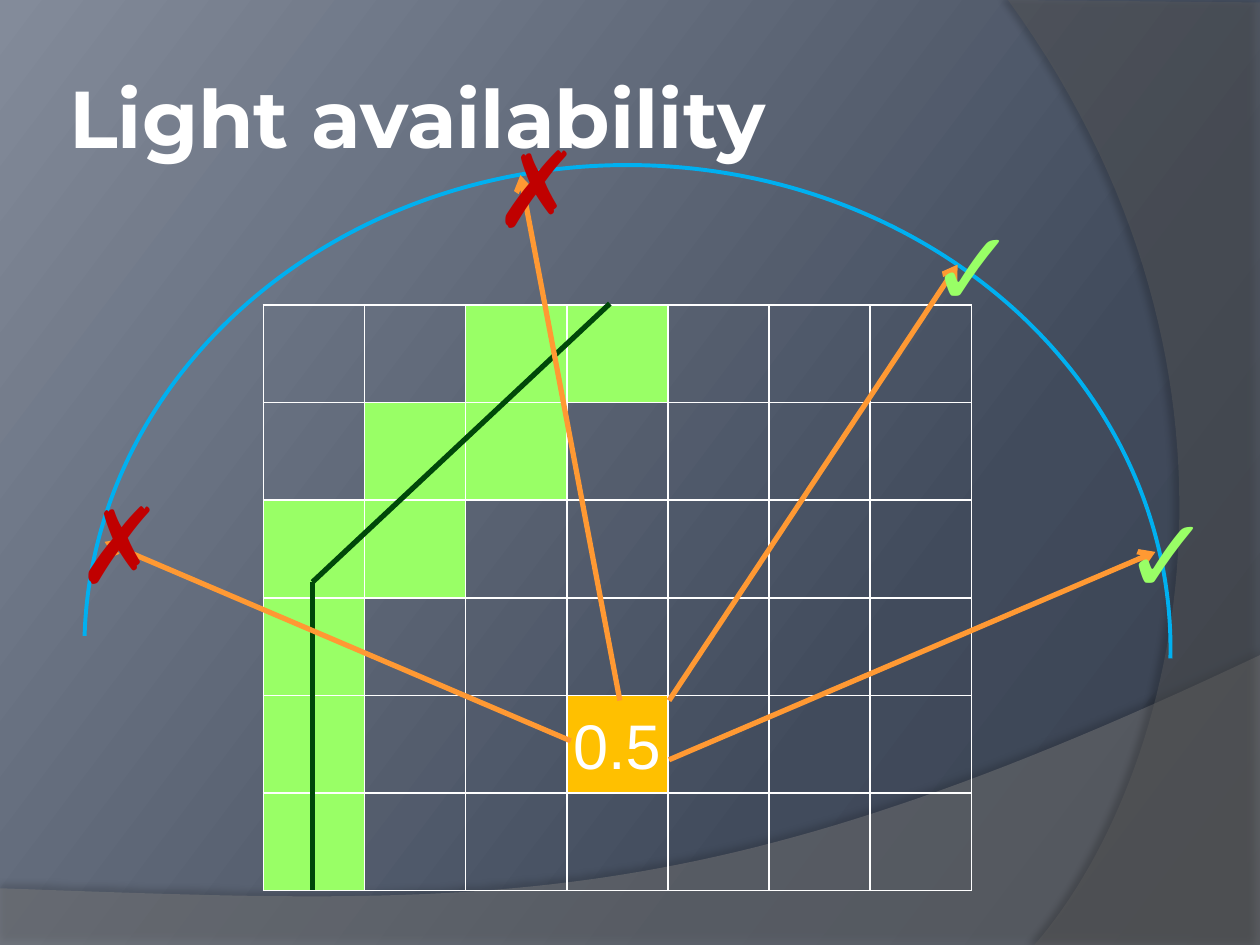
import pptx
import pptx.dml.color
import pptx.enum.shapes
import pptx.enum.text
import pptx.oxml
import pptx.oxml.ns
import pptx.util
from pptx.util import Inches

NS = pptx.oxml.ns.nsdecls("a")
LEAF, STEM, SUN, RAY, SKY, BLOCKED = "99FF66", "004809", "FFC000", "FF9933", "00B0F0", "C00000"
WHITE = "FFFFFF"


def rgb(value):
    return pptx.dml.color.RGBColor.from_string(value)


def xml(text):
    """Parse one drawing element, given without its namespace declaration."""
    head, rest = text.split(">", 1)
    closing = "/" if head.endswith("/") else ""
    return pptx.oxml.parse_xml(f"{head.rstrip('/')} {NS}{closing}>{rest}")


def curve(p0, p1, p2, p3, steps=60):
    """Points along a cubic curve, the first one left out."""
    for i in range(1, steps + 1):
        t = i / steps
        u = 1 - t
        yield tuple(u**3 * a + 3 * u * u * t * b + 3 * u * t * t * c + t**3 * d
                    for a, b, c, d in zip(p0, p1, p2, p3))


def add_swoosh(s, points, color, alpha, shadow_alpha, direction):
    pts = [(Inches(x), Inches(y)) for x, y in points]
    builder = s.shapes.build_freeform(*pts[0], scale=1.0)
    builder.add_line_segments(pts[1:], close=True)
    sp = builder.convert_to_shape()
    sp.fill.solid()
    sp.fill.fore_color.rgb = rgb(color)
    sp.fill._xPr.solidFill[0].append(xml(f'<a:alpha val="{alpha * 1000}"/>'))
    sp.line.fill.background()
    sp._element.spPr.append(xml(
        f'<a:effectLst><a:outerShdw blurRad="50800" dist="44450" dir="{direction * 60000}" '
        f'algn="ctr" rotWithShape="0"><a:srgbClr val="000000">'
        f'<a:alpha val="{shadow_alpha * 1000}"/></a:srgbClr></a:outerShdw></a:effectLst>'))


def add_background(s, w, h):
    # Gradient, dark at lower right and light at upper left
    fill = s.background.fill
    fill.gradient()
    grad = s._element.cSld.bg.bgPr.find(pptx.oxml.ns.qn("a:gradFill"))
    stops = "".join(f'<a:gs pos="{pos * 1000}"><a:srgbClr val="{color}"/></a:gs>'
                    for pos, color in ((0, "373F4D"), (30, "414B5C"), (100, "838B9A")))
    grad.getparent().replace(grad, xml(
        f'<a:gradFill rotWithShape="1"><a:gsLst>{stops}</a:gsLst>'
        f'<a:lin ang="{217 * 60000}" scaled="0"/></a:gradFill>'))
    # Translucent bands along the bottom and right edges
    bottom = curve((w, 5.2), (5.59, 7.29), (3.91, 7.19), (0, 7.05))
    add_swoosh(s, [(0, h), (w, h), (w, 5.2), *bottom], "7F7F7F", 45, 35, 270)
    right = curve((8.21, h), (9.35, 6.19), (10.18, 3), (8, 0))
    add_swoosh(s, [(w, 0.02), (w, h), (8.21, h), *right], "5E5E5E", 40, 45, 180)


def add_run(p, text, size, color, font, bold=False):
    r = p.add_run()
    r.text = text
    r.font.size = pptx.util.Pt(size)
    r.font.name = font
    r.font.bold = bold
    r.font.color.rgb = rgb(color)


def add_title(s, text, x, y, w, h):
    sp = s.shapes.title
    s.shapes._spTree.append(sp._element)  # in front of the background bands
    sp.left, sp.top, sp.width, sp.height = (Inches(v) for v in (x, y, w, h))
    tf = sp.text_frame
    tf.margin_left = tf.margin_right = tf.margin_top = tf.margin_bottom = Inches(0.05)
    tf.vertical_anchor = pptx.enum.text.MSO_ANCHOR.MIDDLE
    p = tf.paragraphs[0]
    p.alignment = pptx.enum.text.PP_ALIGN.LEFT
    add_run(p, text, 46, WHITE, "Montserrat", True)


def add_grid(s, pattern, x, y, w, h):
    """Table of cells: L is a leaf, S the measured cell, a dot is empty."""
    rows, cols = len(pattern), len(pattern[0])
    table = s.shapes.add_table(rows, cols, Inches(x), Inches(y), Inches(w), Inches(h)).table
    table.first_row = table.horz_banding = False
    for r, marks in enumerate(pattern):
        for c, mark in enumerate(marks):
            cell = table.cell(r, c)
            for side in "LRTB":
                cell._tc.get_or_add_tcPr().append(xml(
                    f'<a:ln{side} w="12700"><a:solidFill><a:srgbClr val="{WHITE}"/>'
                    f'</a:solidFill></a:ln{side}>'))
            if mark == ".":
                cell.fill.background()
            else:
                cell.fill.solid()
                cell.fill.fore_color.rgb = rgb({"L": LEAF, "S": SUN}[mark])


def add_line(s, start, end, color, arrow=False):
    ln = s.shapes.add_connector(pptx.enum.shapes.MSO_CONNECTOR.STRAIGHT,
                                *(Inches(v) for v in (*start, *end)))
    ln.line.color.rgb = rgb(color)
    ln.line.width = pptx.util.Pt(3)
    if arrow:
        ln.line._get_or_add_ln().append(xml('<a:tailEnd type="arrow"/>'))
    ln._element.spPr.append(xml("<a:effectLst/>"))


def add_sky(s, x, y, w, h):
    sp = s.shapes.add_shape(pptx.enum.shapes.MSO_SHAPE.ARC,
                            Inches(x), Inches(y), Inches(w), Inches(h))
    sp.adjustments[0], sp.adjustments[1] = 108.82, 0.61
    sp.shadow.inherit = False
    sp.fill.background()
    sp.line.color.rgb = rgb(SKY)
    sp.line.width = pptx.util.Pt(2.25)


def add_label(s, text, size, color, x, y, w, h):
    tf = s.shapes.add_textbox(Inches(x), Inches(y), Inches(w), Inches(h)).text_frame
    tf.word_wrap = True
    add_run(tf.paragraphs[0], text, size, color, "Arial")


def main():
    prs = pptx.Presentation()
    prs.slide_width, prs.slide_height = Inches(10), Inches(7.5)
    s = prs.slides.add_slide(prs.slide_layouts[5])
    add_background(s, 10, 7.5)
    add_title(s, "Light availability", 0.5, 0.3, 8.17, 1.25)
    add_grid(s, ["..LL...", ".LL....", "LL.....", "L......", "L..S...", "L......"],
             2.09, 2.42, 5.62, 4.65)

    # Plant stem
    bend = (2.48, 4.62)
    add_line(s, bend, (4.84, 2.41), STEM)
    add_line(s, (2.48, 7.06), bend, STEM)

    # Sky and the rays reaching towards it
    add_sky(s, 0.67, 1.31, 8.62, 7.68)
    for start, end in (((4.53, 5.88), (0.83, 4.3)), ((4.92, 5.56), (4.13, 1.39)),
                       ((5.31, 6.03), (9.17, 4.38)), ((5.31, 5.56), (7.6, 2.1))):
        add_line(s, start, end, RAY, arrow=True)

    # Blocked and open rays, and the resulting share of light
    for mark, color, x, y in (("✗", BLOCKED, 0.51, 3.75), ("✗", BLOCKED, 3.82, 0.92),
                              ("✓", LEAF, 7.28, 1.55), ("✓", LEAF, 8.82, 3.83)):
        add_label(s, mark, 60, color, x, y, 1.18, 1.11)
    add_label(s, "0.5", 36, WHITE, 4.45, 5.56, 1.42, 0.71)
    prs.save("out.pptx")


if __name__ == "__main__":
    main()
